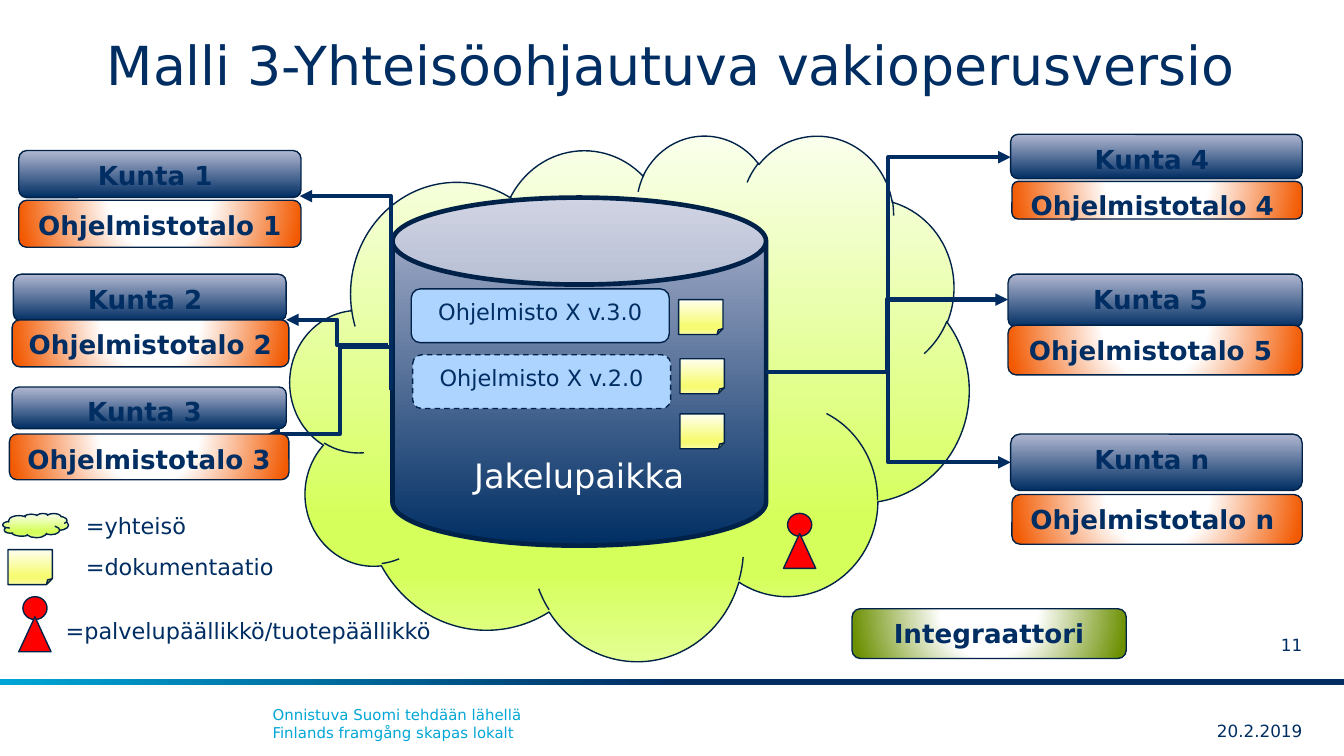
import pptx
import pptx.dml.color
import pptx.enum.dml
import pptx.enum.shapes
import pptx.enum.text
import pptx.oxml
import pptx.oxml.ns
import pptx.util

Inches = pptx.util.Inches
RGBColor = pptx.dml.color.RGBColor
SHAPE = pptx.enum.shapes.MSO_SHAPE
ALIGN = pptx.enum.text.PP_ALIGN
ANCHOR = pptx.enum.text.MSO_ANCHOR
FIT = pptx.enum.text.MSO_AUTO_SIZE

FONT = "DejaVu Sans"
NAVY = RGBColor(0x00, 0x2E, 0x63)
OUTLINE = RGBColor(0x00, 0x22, 0x49)
ARROW = RGBColor(0x00, 0x2D, 0x61)
CYAN = RGBColor(0x00, 0xA6, 0xD6)
WHITE = RGBColor(0xFF, 0xFF, 0xFF)
SKY = RGBColor(0xAD, 0xD3, 0xFF)
RED = RGBColor(0xFF, 0x00, 0x00)
STEEL = RGBColor(0xB1, 0xB7, 0xD1)
ORANGE = RGBColor(0xF2, 0x59, 0x00)
OLIVE = RGBColor(0x6B, 0x8F, 0x00)
LIME = RGBColor(0xD5, 0xFF, 0x5A)
YELLOW = RGBColor(0xF7, 0xFB, 0x73)

LINEAR = '<a:lin ang="{}" scaled="0"/>'
RADIAL = '<a:path path="circle"><a:fillToRect l="50000" t="-80000" r="50000" b="180000"/></a:path>'
DOWN, LEFT, UP = (LINEAR.format(degrees * 60000) for degrees in (90, 180, 270))

BAR_FILL = ([(50, NAVY), (100, CYAN)], LEFT)
BLUE_FILL = ([(0, NAVY), (100, STEEL)], UP)
CLOUD_FILL = ([(0, RGBColor(0xFA, 0xFF, 0xED)), (74, LIME), (83, LIME),
               (100, RGBColor(0xE3, 0xFF, 0x91))], DOWN)
NOTE_FILL = ([(0, RGBColor(0xFE, 0xFF, 0xEF)), (74, YELLOW), (83, YELLOW),
              (100, RGBColor(0xFA, 0xFC, 0xA2))], DOWN)
ORANGE_FILL = ([(0, WHITE), (35, WHITE), (100, ORANGE)], RADIAL)
GREEN_FILL = ([(0, WHITE), (35, WHITE), (100, OLIVE)], RADIAL)

TITLE = "Malli 3-Yhteisöohjautuva vakioperusversio"
FOOTER = ["Onnistuva Suomi tehdään lähellä", "Finlands framgång skapas lokalt"]
CLOUDS = [(2.16, 1, 5.05, 3.91), (0.02, 3.82, 0.49, 0.18)]
MUNICIPALITIES = [
    ("Kunta 1 ", (0.14, 1.12, 2.1, 0.35)),
    ("Kunta 2 ", (0.1, 2.04, 2.03, 0.35)),
    ("Kunta 3 ", (0.09, 2.88, 2.04, 0.31)),
    ("Kunta 4 ", (7.52, 1, 2.17, 0.33)),
    ("Kunta 5 ", (7.5, 2.04, 2.19, 0.4)),
    ("Kunta n ", (7.52, 3.23, 2.17, 0.42)),
]
SOFTWARE_HOUSES = [
    ("Ohjelmistotalo 1 ", (0.14, 1.49, 2.1, 0.35)),
    ("Ohjelmistotalo 2 ", (0.09, 2.38, 2.06, 0.35)),
    ("Ohjelmistotalo 3 ", (0.07, 3.23, 2.08, 0.34)),
    ("Ohjelmistotalo 4 ", (7.53, 1.35, 2.16, 0.28)),
    ("Ohjelmistotalo 5 ", (7.5, 2.42, 2.19, 0.37)),
    ("Ohjelmistotalo n ", (7.53, 3.68, 2.16, 0.37)),
]
VERSIONS = [
    ("Ohjelmisto X v.3.0", (3.06, 2.15, 1.92, 0.4), None),
    ("Ohjelmisto X v.2.0", (3.07, 2.64, 1.92, 0.4), pptx.enum.dml.MSO_LINE.DASH),
]
NOTES = [(0.06, 4.09), (5.05, 2.23), (5.06, 2.67), (5.06, 3.08)]
MANAGERS = [(5.83, 3.82), (0.14, 4.44)]
ARROWS = [
    ((5.8, 2.77), (7.5, 2.23), 0.47),
    ((5.77, 2.77), (7.52, 3.44), 0.48),
    ((5.7, 2.77), (7.52, 1.17), 0.5),
    ((2.91, 2.9), (2.23, 1.46), 0),
    ((2.89, 2.57), (2.13, 2.38), 0.5),
    ((2.9, 2.58), (1.99, 3.23), 0.41),
]
LEGEND = [
    ("=yhteisö", (0.54, 3.76, 0.95, 0.3)),
    ("=dokumentaatio", (0.54, 4.07, 1.61, 0.3)),
    ("=palvelupäällikkö/tuotepäällikkö", (0.39, 4.54, 2.96, 0.3)),
]
STAMPS = [("20.2.2019", (8.7, 5.33, 0.99, 0.22)), ("11", (9.26, 4.69, 0.43, 0.22))]


def inches(place):
    return [Inches(length) for length in place]


def drawing_xml(tag, content="", attributes=""):
    names = pptx.oxml.ns.nsdecls("a")
    return pptx.oxml.parse_xml(f"<a:{tag} {names} {attributes}>{content}</a:{tag}>")


def write(box, text, size=12, color=NAVY, bold=False, align=ALIGN.LEFT,
          anchor=ANCHOR.TOP, margins=(0.1, 0.05), wrap=True, fit=FIT.NONE):
    frame = box.text_frame
    frame.word_wrap = wrap
    frame.auto_size = fit
    frame.vertical_anchor = anchor
    frame.margin_left = frame.margin_right = Inches(margins[0])
    frame.margin_top = frame.margin_bottom = Inches(margins[1])
    para = frame.paragraphs[0]
    para.text = text
    para.alignment = align
    for span in para.runs:
        span.font.name = FONT
        span.font.size = pptx.util.Pt(size)
        span.font.bold = bold
        span.font.color.rgb = color


def add_text(page, text, place, **style):
    write(page.shapes.add_textbox(*inches(place)), text, **style)


def add_figure(shapes, kind, place, fill, line=0.75, dash=None):
    figure = shapes.add_shape(kind, *inches(place))
    figure.shadow.inherit = False
    if isinstance(fill, RGBColor):
        figure.fill.solid()
        figure.fill.fore_color.rgb = fill
    else:
        stops, direction = fill
        marks = "".join(f'<a:gs pos="{share * 1000}"><a:srgbClr val="{color}"/></a:gs>'
                        for share, color in stops)
        figure.fill.background()
        blank = figure.element.spPr.find(pptx.oxml.ns.qn("a:noFill"))
        gradient = drawing_xml("gradFill", f"<a:gsLst>{marks}</a:gsLst>{direction}",
                               'rotWithShape="1"')
        figure.element.spPr.replace(blank, gradient)
    if line:
        figure.line.color.rgb = OUTLINE
        figure.line.width = pptx.util.Pt(line)
        if dash:
            figure.line.dash_style = dash
    else:
        figure.line.fill.background()
    return figure


def add_label(page, text, place, fill, size=14, bold=True, dash=None):
    label = add_figure(page.shapes, SHAPE.ROUNDED_RECTANGLE, place, fill, dash=dash)
    write(label, text, size=size, bold=bold, align=ALIGN.CENTER)


def add_arrow(page, start, end, bend):
    arrow = page.shapes.add_connector(pptx.enum.shapes.MSO_CONNECTOR.ELBOW,
                                      *inches(start + end))
    arrow.line.color.rgb = ARROW
    arrow.line.width = pptx.util.Pt(2.25)
    properties = arrow.element.spPr
    guides = properties.find(pptx.oxml.ns.qn("a:prstGeom")).get_or_add_avLst()
    guides.append(drawing_xml("gd", attributes=f'name="adj1" fmla="val {round(bend * 100000)}"'))
    outline = properties.find(pptx.oxml.ns.qn("a:ln"))
    outline.append(drawing_xml("tailEnd", attributes='type="triangle"'))
    properties.append(drawing_xml("effectLst"))


def add_manager(page, left, top):
    group = page.shapes.add_group_shape()
    add_figure(group.shapes, SHAPE.OVAL, (left + 0.03, top, 0.18, 0.17), RED)
    add_figure(group.shapes, SHAPE.ISOSCELES_TRIANGLE, (left, top + 0.15, 0.24, 0.26), RED)


def main():
    deck = pptx.Presentation()
    deck.slide_width, deck.slide_height = Inches(10), Inches(5.625)
    page = deck.slides.add_slide(deck.slide_layouts[5])

    title = page.shapes.title
    title.left, title.top, title.width, title.height = inches((0.74, 0.23, 8.51, 0.54))
    write(title, TITLE, size=28.8, align=ALIGN.CENTER, anchor=ANCHOR.BOTTOM, margins=(0, 0.05))

    add_figure(page.shapes, SHAPE.RECTANGLE, (0, 5.05, 10, 0.05), BAR_FILL, line=0)
    add_text(page, "\v".join(FOOTER), (1.93, 5.2, 6.54, 0.37), size=8, color=CYAN)
    for text, place in STAMPS:
        add_text(page, text, place, size=9, align=ALIGN.RIGHT, anchor=ANCHOR.MIDDLE,
                 margins=(0, 0))

    for place in CLOUDS:
        add_figure(page.shapes, SHAPE.CLOUD, place, CLOUD_FILL)
    store = add_figure(page.shapes, SHAPE.CAN, (2.92, 1.47, 2.78, 2.59), BLUE_FILL, line=2.5)
    write(store, "Jakelupaikka", size=18, color=WHITE, align=ALIGN.CENTER, anchor=ANCHOR.BOTTOM)

    for text, place in MUNICIPALITIES:
        add_label(page, text, place, BLUE_FILL)
    for text, place, dash in VERSIONS:
        add_label(page, text, place, SKY, size=12, bold=False, dash=dash)
    for left, top in NOTES:
        add_figure(page.shapes, SHAPE.FOLDED_CORNER, (left, top, 0.33, 0.26), NOTE_FILL)
    for start, end, bend in ARROWS:
        add_arrow(page, start, end, bend)
    for left, top in MANAGERS:
        add_manager(page, left, top)
    for text, place in LEGEND:
        add_text(page, text, place, wrap=False, fit=FIT.SHAPE_TO_FIT_TEXT)
    for text, place in SOFTWARE_HOUSES:
        add_label(page, text, place, ORANGE_FILL)
    add_label(page, "Integraattori", (6.34, 4.53, 2.04, 0.37), GREEN_FILL)

    deck.save("out.pptx")


if __name__ == "__main__":
    main()
